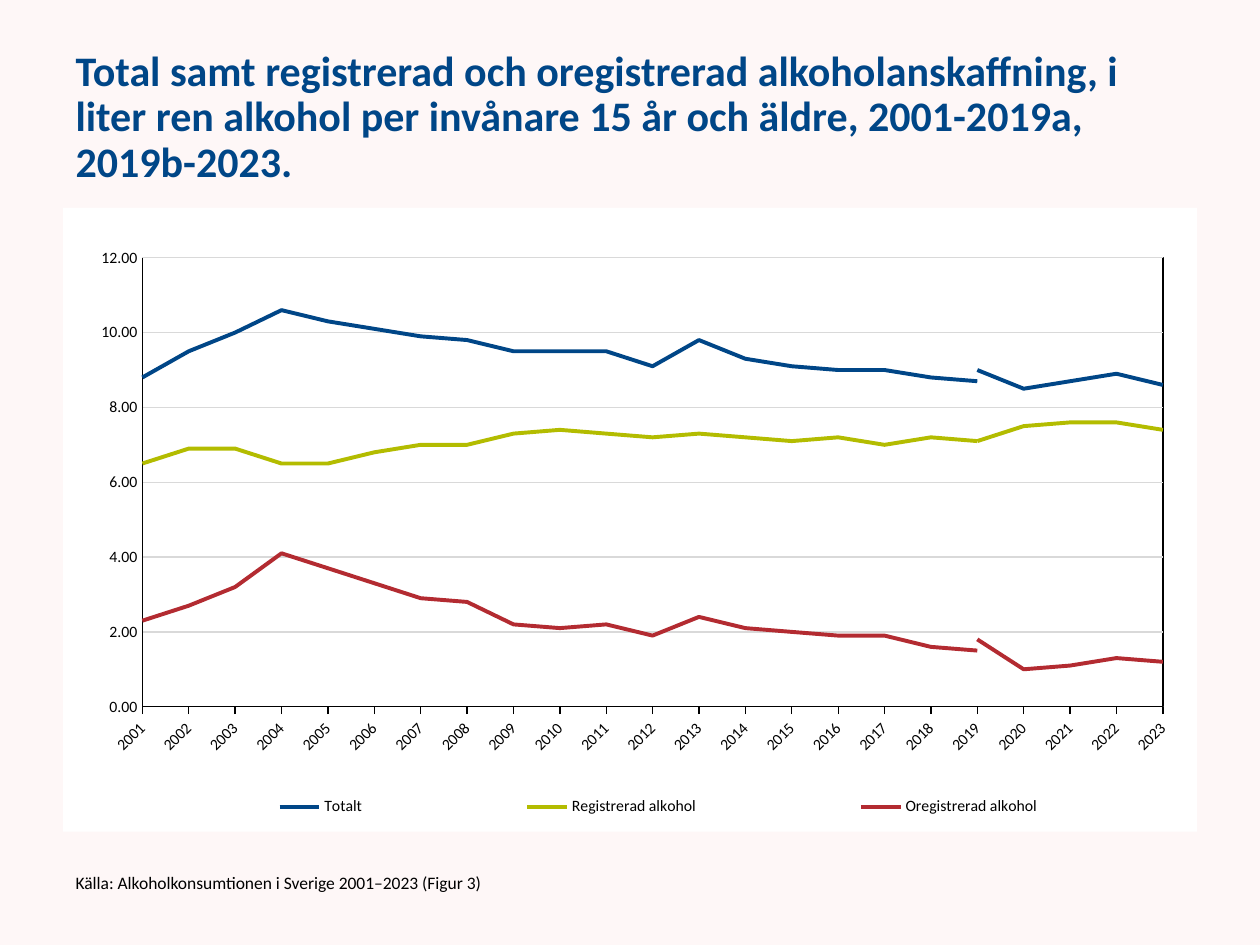
from pptx import Presentation
from pptx import util as u
from pptx.chart.data import CategoryChartData
from pptx.dml.color import RGBColor
from pptx.enum import chart as charts, text
from pptx.oxml import parse_xml
from pptx.oxml.ns import nsdecls, qn

COLORS = {
    "background": "FEF7F7", "white": "FFFFFF", "black": "000000", "grid": "D9D9D9",
    "total": "004687", "registered": "B3BC00", "unregistered": "B32B31",
}
YEARS = range(2001, 2024)
BREAK_YEAR = 2019  # the last year of the old method and the first of the new

# name, colour, values 2001-2019a, name of the new part, values 2019b-2023
SERIES = [
    ("Totalt", "total",
     [8.8, 9.5, 10, 10.6, 10.3, 10.1, 9.9, 9.8, 9.5, 9.5, 9.5, 9.1, 9.8, 9.3, 9.1, 9, 9, 8.8, 8.7],
     "Series 2", [9, 8.5, 8.7, 8.9, 8.6]),
    ("Registrerad alkohol", "registered",
     [6.5, 6.9, 6.9, 6.5, 6.5, 6.8, 7, 7, 7.3, 7.4, 7.3, 7.2, 7.3, 7.2, 7.1, 7.2, 7, 7.2, 7.1],
     "Series 4", [7.1, 7.5, 7.6, 7.6, 7.4]),
    ("Oregistrerad alkohol", "unregistered",
     [2.3, 2.7, 3.2, 4.1, 3.7, 3.3, 2.9, 2.8, 2.2, 2.1, 2.2, 1.9, 2.4, 2.1, 2, 1.9, 1.9, 1.6, 1.5],
     "Series 6", [1.8, 1, 1.1, 1.3, 1.2]),
]


def color(name):
    return RGBColor.from_string(COLORS[name])


def element_xml(tag, content="", attributes=""):
    return parse_xml(f'<{tag} {nsdecls("c", "a")} {attributes}>{content}</{tag}>')


def manual_layout(x, y, w, h, inner=False):
    """Return a c:layout element with the box as shares of the chart."""
    target = '<c:layoutTarget val="inner"/>' if inner else ""
    return element_xml(
        "c:layout", f'<c:manualLayout>{target}'
        '<c:xMode val="edge"/><c:yMode val="edge"/>'
        f'<c:x val="{x}"/><c:y val="{y}"/><c:w val="{w}"/><c:h val="{h}"/>'
        '</c:manualLayout>')


class SlideBuilder:
    """Holds the style and the current slide; boxes are shares of the slide."""

    font_name = "Calibri"

    def __init__(self, presentation):
        self.width, self.height = presentation.slide_width, presentation.slide_height
        self.slide = presentation.slides.add_slide(presentation.slide_layouts[1])
        self.slide.background.fill.solid()
        self.slide.background.fill.fore_color.rgb = color("background")

    def box(self, left, top, width, height):
        return (int(left * self.width), int(top * self.height),
                int(width * self.width), int(height * self.height))

    def style_font(self, font, size, color_name="black", bold=False):
        font.name, font.size, font.bold = self.font_name, u.Pt(size), bold
        font.color.rgb = color(color_name)

    def placeholder(self, index, words, box, size, color_name="black", bold=False):
        shape = self.slide.placeholders[index]
        shape.left, shape.top, shape.width, shape.height = self.box(*box)
        frame = shape.text_frame
        frame.text = words
        frame.word_wrap = True
        frame.auto_size = text.MSO_AUTO_SIZE.NONE
        frame.vertical_anchor = text.MSO_ANCHOR.MIDDLE
        paragraph = frame.paragraphs[0]
        paragraph.alignment = text.PP_ALIGN.LEFT
        paragraph.line_spacing = 0.9
        paragraph.space_before = u.Pt(0)
        properties = paragraph._p.get_or_add_pPr()
        properties.set("marL", "0")
        properties.set("indent", "0")
        properties.append(element_xml("a:buNone"))
        self.style_font(paragraph.runs[0].font, size, color_name, bold)

    def style_axis(self, axis, tick):
        axis.major_tick_mark = tick
        axis.minor_tick_mark = charts.XL_TICK_MARK.NONE
        axis.format.line.color.rgb = color("black")
        axis.format.line.width = u.Pt(0.75)
        self.style_font(axis.tick_labels.font, 9)

    def style_legend(self, chart, hidden):
        chart.has_legend = True
        legend = chart.legend
        legend.position = charts.XL_LEGEND_POSITION.BOTTOM
        legend.include_in_layout = False
        self.style_font(legend.font, 9)
        element = legend._element
        for layout in element.findall(qn("c:layout")):
            element.remove(layout)
        entries = [element_xml("c:legendEntry", f'<c:idx val="{i}"/><c:delete val="1"/>')
                   for i in hidden]
        position = element.find(qn("c:legendPos"))
        for part in [manual_layout(0.05, 0.93, 0.95, 0.06)] + entries[::-1]:
            position.addnext(part)

    def line_chart(self, data, line_colors, hidden, box):
        chart = self.slide.shapes.add_chart(
            charts.XL_CHART_TYPE.LINE, *self.box(*box), data).chart
        chart.has_title = False
        self.style_font(chart.font, 10)

        years, liters = chart.category_axis, chart.value_axis
        self.style_axis(years, charts.XL_TICK_MARK.OUTSIDE)
        self.style_axis(liters, charts.XL_TICK_MARK.NONE)
        label_body = next(years._element.iter(qn("a:bodyPr")))
        label_body.set("rot", "-2700000")
        label_body.set("vert", "horz")
        liters.minimum_scale, liters.maximum_scale, liters.major_unit = 0, 12, 2
        liters.tick_labels.number_format = "0.00"
        liters.tick_labels.number_format_is_linked = False
        liters.major_gridlines.format.line.color.rgb = color("grid")
        liters.major_gridlines.format.line.width = u.Pt(0.75)
        for crossing in liters._element.findall(qn("c:crossBetween")):
            liters._element.remove(crossing)
        liters._element.find(qn("c:crosses")).addnext(
            element_xml("c:crossBetween", attributes='val="midCat"'))

        for series, name in zip(chart.plots[0].series, line_colors):
            series.smooth = False
            series.marker.style = charts.XL_MARKER_STYLE.NONE
            series.format.line.color.rgb = color(name)
            series.format.line.width = u.Pt(2.25)
        chart.plots[0].vary_by_categories = False
        self.style_legend(chart, hidden)

        plot_area = chart._chartSpace.chart.plotArea
        for layout in plot_area.findall(qn("c:layout")):
            plot_area.remove(layout)
        plot_area.insert(0, manual_layout(0.07, 0.08, 0.9, 0.72, inner=True))
        plot_area.append(element_xml(
            "c:spPr", '<a:noFill/><a:ln w="9525"><a:solidFill>'
            f'<a:srgbClr val="{COLORS["black"]}"/></a:solidFill></a:ln>'))
        chart._chartSpace.chart.addnext(element_xml(
            "c:spPr", f'<a:solidFill><a:srgbClr val="{COLORS["white"]}"/></a:solidFill>'
            '<a:ln><a:noFill/></a:ln>'))


def consumption_data():
    data = CategoryChartData(number_format="0.00")
    data.categories = [str(year) for year in YEARS]
    for name, _, old_values, new_name, new_values in SERIES:
        data.add_series(name, old_values + [None] * (YEARS[-1] - BREAK_YEAR))
        data.add_series(new_name, [None] * (BREAK_YEAR - YEARS[0]) + new_values)
    return data


def main():
    presentation = Presentation()
    presentation.slide_width, presentation.slide_height = u.Inches(10), u.Inches(7.5)
    builder = SlideBuilder(presentation)
    builder.placeholder(
        0, "Total samt registrerad och oregistrerad alkoholanskaffning, i liter ren alkohol "
        "per invånare 15 år och äldre, 2001-2019a, 2019b-2023.",
        (0.05, 0.04, 0.9, 0.17), 24, "total", bold=True)
    builder.placeholder(
        1, "Källa: Alkoholkonsumtionen i Sverige 2001–2023 (Figur 3)",
        (0.05, 0.91, 0.45, 0.05), 10)
    line_colors = [row[1] for row in SERIES for _ in range(2)]
    builder.line_chart(consumption_data(), line_colors,
                       range(1, len(line_colors), 2), (0.05, 0.22, 0.9, 0.66))
    presentation.save("out.pptx")


if __name__ == "__main__":
    main()
